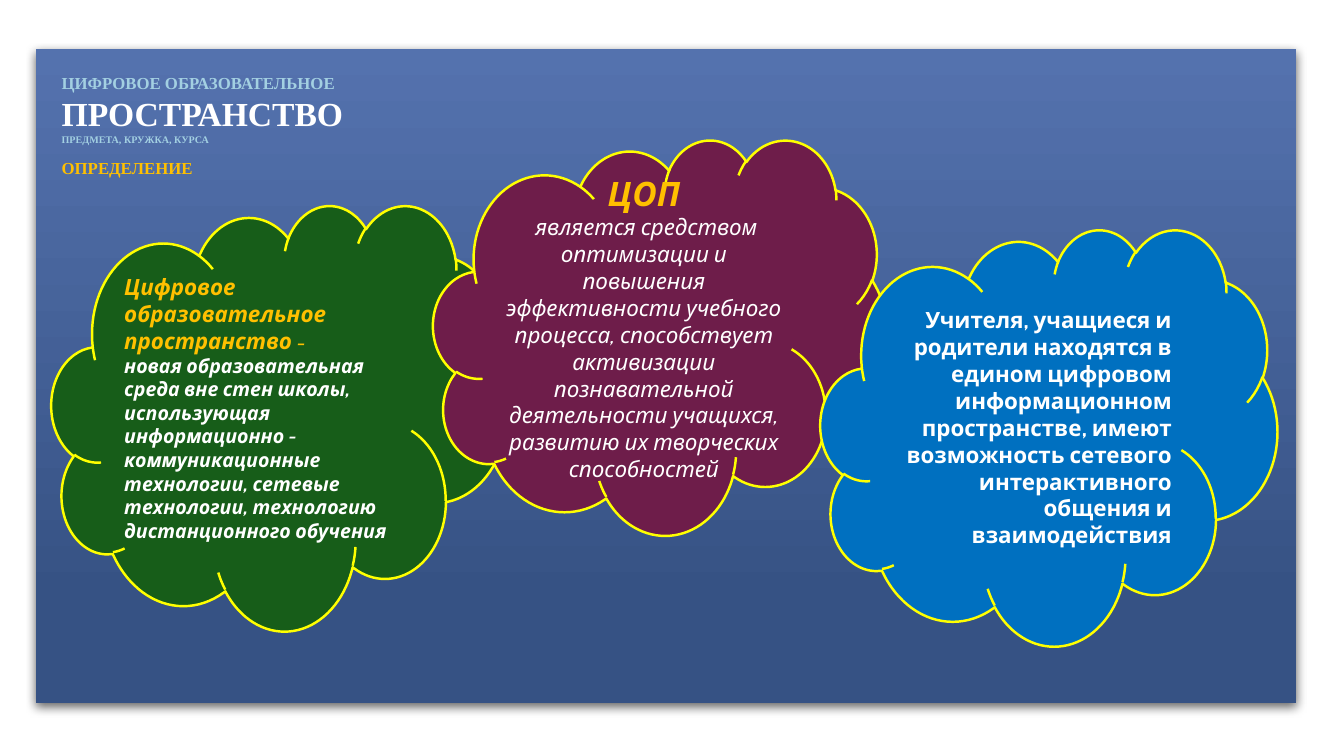
import pptx
import pptx.dml.color
import pptx.enum.shapes
import pptx.enum.text
import pptx.oxml
import pptx.util
from pptx.util import Cm, Pt

ALIGN = pptx.enum.text.PP_ALIGN
ANCHOR = pptx.enum.text.MSO_ANCHOR
SHAPES = pptx.enum.shapes.MSO_SHAPE

WHITE, GOLD, PALE, YELLOW = "FFFFFF", "FFC000", "A3D0E2", "FFFF00"
SERIF, SANS = "Times New Roman", "Cabin"

PANEL = (0.91, 1.24, 31.75, 16.48)
PANEL_STOPS = [(0, "5472AE"), (0.84, "365284")]
HEADING = (1.3, 1.7, 8.23, 2.92)
HEADING_PARAGRAPHS = [
    [
        ("ЦИФРОВОЕ ОБРАЗОВАТЕЛЬНОЕ ", dict(size=12, color=PALE)),
        ("ПРОСТРАНСТВО\v", dict(size=24, color=WHITE)),
        ("ПРЕДМЕТА, КРУЖКА, КУРСА", dict(size=7.2, color=PALE)),
    ],
    [("ОПРЕДЕЛЕНИЕ", dict(size=12, color=GOLD))],
]

CLOUDS = [
    dict(
        place=(1.3, 5.16, 11.48, 10.72), fill="175D19", align=ALIGN.LEFT,
        paragraphs=[
            [
                ("Цифровое образовательное пространство ", dict(size=16, color=GOLD, italic=True)),
                ("–", dict(size=12, color=GOLD, italic=True)),
            ],
            [(
                "новая образовательная среда вне стен школы, использующая "
                "информационно - коммуникационные технологии, сетевые технологии, "
                "технологию дистанционного обучения",
                dict(size=14, color=WHITE, italic=True),
            )],
        ],
    ),
    dict(
        place=(10.92, 3.51, 11.43, 9.96), fill="6E1D4A", align=ALIGN.CENTER,
        paragraphs=[[
            ("ЦОП\v", dict(size=24, color=GOLD, italic=True)),
            (
                " является средством оптимизации и повышения эффективности "
                "учебного процесса, способствует активизации познавательной "
                "деятельности учащихся, развитию их творческих способностей",
                dict(size=16, color=WHITE, bold=False, italic=True),
            ),
        ]],
    ),
    dict(
        place=(20.68, 5.77, 11.51, 10.49), fill="0070C0", align=ALIGN.RIGHT,
        paragraphs=[[(
            "Учителя, учащиеся и родители находятся в едином цифровом "
            "информационном пространстве, имеют возможность сетевого "
            "интерактивного общения и взаимодействия",
            dict(size=16, color=WHITE),
        )]],
    ),
]


def rgb(value):
    return pptx.dml.color.RGBColor.from_string(value)


def add_text(para, text, font, size, color, bold=True, italic=False):
    for index, piece in enumerate(text.split("\v")):
        if index:
            para.add_line_break()
        if piece:
            span = para.add_run()
            span.text = piece
            span.font.name = font
            span.font.size = Pt(size)
            span.font.bold = bold
            span.font.italic = italic
            span.font.color.rgb = rgb(color)


def write(box, paragraphs, font, align, anchor, before=0, after=0):
    frame = box.text_frame
    frame.word_wrap = True
    frame.auto_size = pptx.enum.text.MSO_AUTO_SIZE.NONE
    frame.vertical_anchor = anchor
    for index, spans in enumerate(paragraphs):
        para = frame.add_paragraph() if index else frame.paragraphs[0]
        para.alignment = align
        para.line_spacing = 1.0
        para.space_before = Pt(before)
        para.space_after = Pt(after)
        for text, style in spans:
            add_text(para, text, font, **style)


def add_panel(page):
    panel = page.shapes.add_shape(SHAPES.RECTANGLE, *map(Cm, PANEL))
    panel.line.fill.background()
    panel.fill.gradient()
    panel.fill.gradient_angle = 270
    for stop, (position, color) in zip(panel.fill.gradient_stops, PANEL_STOPS):
        stop.position = position
        stop.color.rgb = rgb(color)
    panel.element.spPr.append(pptx.oxml.parse_xml(
        '<a:effectLst xmlns:a="http://schemas.openxmlformats.org/drawingml/2006/main">'
        f'<a:outerShdw blurRad="{Pt(7)}" dist="{Pt(3)}" dir="{84 * 60000}" rotWithShape="0">'
        '<a:srgbClr val="000000"><a:alpha val="60000"/></a:srgbClr>'
        '</a:outerShdw></a:effectLst>'
    ))
    page.shapes.element.insert(2, panel.element)


def add_heading(page):
    heading = page.shapes.title
    heading.left, heading.top, heading.width, heading.height = map(Cm, HEADING)
    write(heading, HEADING_PARAGRAPHS, SERIF, ALIGN.LEFT, ANCHOR.TOP, before=3, after=6)


def add_cloud(page, place, fill, align, paragraphs):
    cloud = page.shapes.add_shape(SHAPES.CLOUD, *map(Cm, place))
    cloud.shadow.inherit = False
    cloud.fill.solid()
    cloud.fill.fore_color.rgb = rgb(fill)
    cloud.line.color.rgb = rgb(YELLOW)
    cloud.line.width = Pt(1.75)
    write(cloud, paragraphs, SANS, align, ANCHOR.MIDDLE)


def main():
    deck = pptx.Presentation()
    deck.slide_width, deck.slide_height = Cm(33.87), Cm(19.05)
    page = deck.slides.add_slide(deck.slide_layouts[5])
    add_panel(page)
    add_heading(page)
    for cloud in CLOUDS:
        add_cloud(page, **cloud)
    deck.save("out.pptx")


if __name__ == "__main__":
    main()
